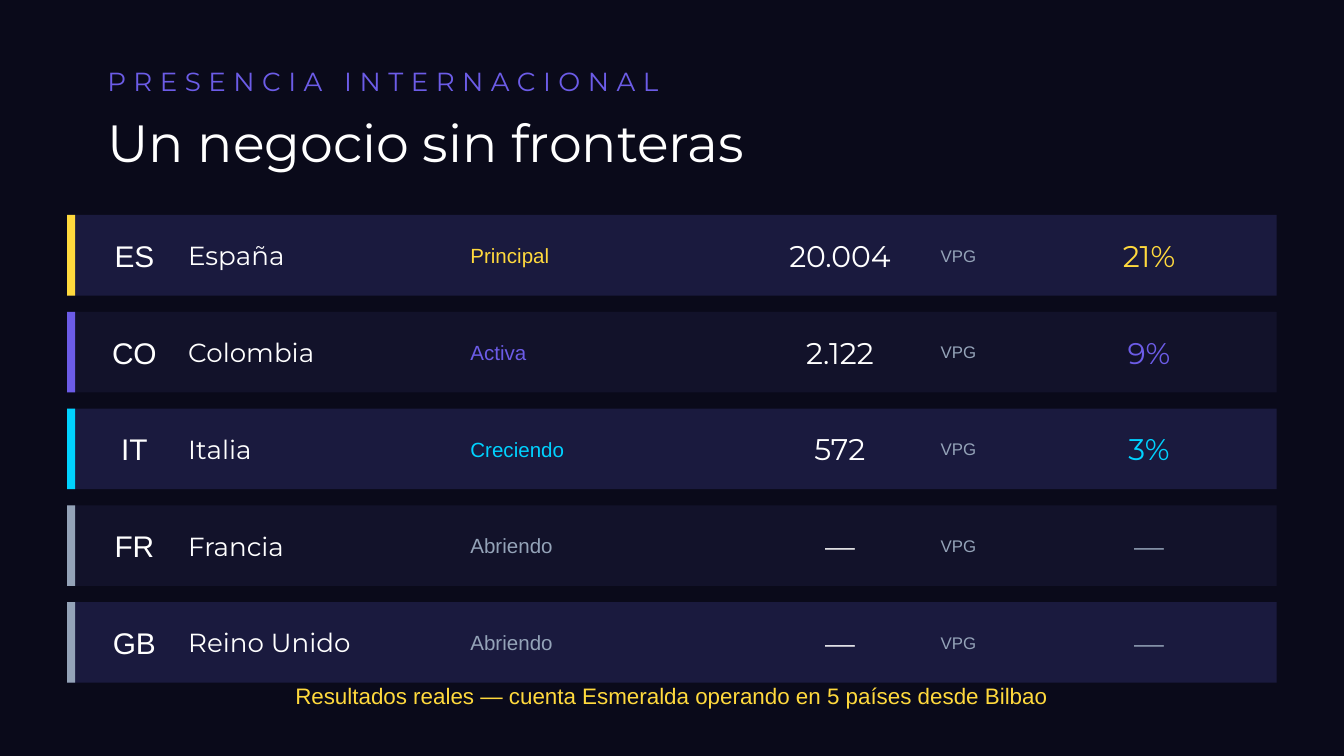
from typing import NamedTuple

from pptx import Presentation
from pptx.dml.color import RGBColor
from pptx.enum.shapes import MSO_SHAPE
from pptx.enum.text import MSO_ANCHOR, MSO_AUTO_SIZE, PP_ALIGN
from pptx.util import Emu, Pt

EMU_PER_PX = 4572  # 200 px to the inch

NIGHT = RGBColor(0x0A, 0x0A, 0x1A)
ROW_LIGHT = RGBColor(0x1A, 0x1A, 0x3E)
ROW_DARK = RGBColor(0x12, 0x12, 0x2A)
WHITE = RGBColor(0xFF, 0xFF, 0xFF)
YELLOW = RGBColor(0xFF, 0xD9, 0x3D)
PURPLE = RGBColor(0x6C, 0x5C, 0xE7)
CYAN = RGBColor(0x00, 0xD2, 0xFF)
GRAY = RGBColor(0x94, 0xA3, 0xB8)

HEADING_FONT = "Montserrat"
BODY_FONT = "Arial"

ROW_LEFT, ROW_TOP = 100, 320
ROW_WIDTH, ROW_HEIGHT, ROW_PITCH = 1800, 120, 144
ACCENT_WIDTH = 12


class Box(NamedTuple):
    left: int
    top: int
    width: int
    height: int


class Style(NamedTuple):
    size: int
    font: str
    align: PP_ALIGN = PP_ALIGN.LEFT


class Column(NamedTuple):
    left: int
    width: int
    style: Style


class Country(NamedTuple):
    code: str
    name: str
    status: str
    volume: str
    share: str
    accent: RGBColor


CODE = Column(140, 120, Style(16, BODY_FONT, PP_ALIGN.CENTER))
NAME = Column(280, 400, Style(14, HEADING_FONT))
STATUS = Column(700, 300, Style(11, BODY_FONT))
VOLUME = Column(1100, 300, Style(16, HEADING_FONT, PP_ALIGN.CENTER))
UNIT = Column(1400, 120, Style(9, BODY_FONT))
SHARE = Column(1560, 300, Style(16, HEADING_FONT, PP_ALIGN.CENTER))

COUNTRIES = [
    Country("ES", "España", "Principal", "20.004", "21%", YELLOW),
    Country("CO", "Colombia", "Activa", "2.122", "9%", PURPLE),
    Country("IT", "Italia", "Creciendo", "572", "3%", CYAN),
    Country("FR", "Francia", "Abriendo", "—", "—", GRAY),
    Country("GB", "Reino Unido", "Abriendo", "—", "—", GRAY),
]


def px(length: int) -> Emu:
    return Emu(length * EMU_PER_PX)


def write_text(shape, text: str, style: Style, color: RGBColor) -> None:
    """Fill a shape with one vertically centred paragraph without insets."""
    frame = shape.text_frame
    frame.word_wrap = True
    frame.auto_size = MSO_AUTO_SIZE.NONE
    frame.vertical_anchor = MSO_ANCHOR.MIDDLE
    frame.margin_left = frame.margin_right = 0
    frame.margin_top = frame.margin_bottom = 0
    frame.text = text
    paragraph = frame.paragraphs[0]
    paragraph.alignment = style.align
    paragraph.font.size = Pt(style.size)
    paragraph.font.name = style.font
    paragraph.font.color.rgb = color


def add_text(slide, box: Box, text: str, style: Style, color: RGBColor):
    shape = slide.shapes.add_textbox(*map(px, box))
    write_text(shape, text, style, color)
    return shape


def add_bar(slide, box: Box, color: RGBColor) -> None:
    shape = slide.shapes.add_shape(MSO_SHAPE.RECTANGLE, *map(px, box))
    shape.shadow.inherit = False
    shape.fill.solid()
    shape.fill.fore_color.rgb = color
    shape.line.fill.background()


def add_country(slide, index: int, country: Country) -> None:
    top = ROW_TOP + index * ROW_PITCH
    background = ROW_DARK if index % 2 else ROW_LIGHT
    add_bar(slide, Box(ROW_LEFT, top, ROW_WIDTH, ROW_HEIGHT), background)
    add_bar(slide, Box(ROW_LEFT, top, ACCENT_WIDTH, ROW_HEIGHT), country.accent)
    cells = [
        (CODE, country.code, WHITE),
        (NAME, country.name, WHITE),
        (STATUS, country.status, country.accent),
        (VOLUME, country.volume, WHITE),
        (UNIT, "VPG", GRAY),
        (SHARE, country.share, country.accent),
    ]
    for column, text, color in cells:
        box = Box(column.left, top, column.width, ROW_HEIGHT)
        add_text(slide, box, text, column.style, color)


def main() -> None:
    presentation = Presentation()
    presentation.slide_width, presentation.slide_height = px(2000), px(1125)
    slide = presentation.slides.add_slide(presentation.slide_layouts[5])
    slide.background.fill.solid()
    slide.background.fill.fore_color.rgb = NIGHT

    # Heading
    eyebrow = add_text(slide, Box(160, 60, 1200, 120), "PRESENCIA INTERNACIONAL",
                       Style(14, HEADING_FONT), PURPLE)
    run = eyebrow.text_frame.paragraphs[0].runs[0]
    run._r.get_or_add_rPr().set("spc", "400")  # 4 pt letter spacing

    title = slide.shapes.title
    title.left, title.top, title.width, title.height = map(px, Box(160, 150, 1600, 120))
    write_text(title, "Un negocio sin fronteras", Style(28, HEADING_FONT), WHITE)

    # Country rows
    for index, country in enumerate(COUNTRIES):
        add_country(slide, index, country)

    # Closing line
    add_text(slide, Box(ROW_LEFT, 1000, ROW_WIDTH, 70),
             "Resultados reales — cuenta Esmeralda operando en 5 países desde Bilbao",
             Style(12, BODY_FONT, PP_ALIGN.CENTER), YELLOW)

    presentation.save("out.pptx")


if __name__ == "__main__":
    main()
